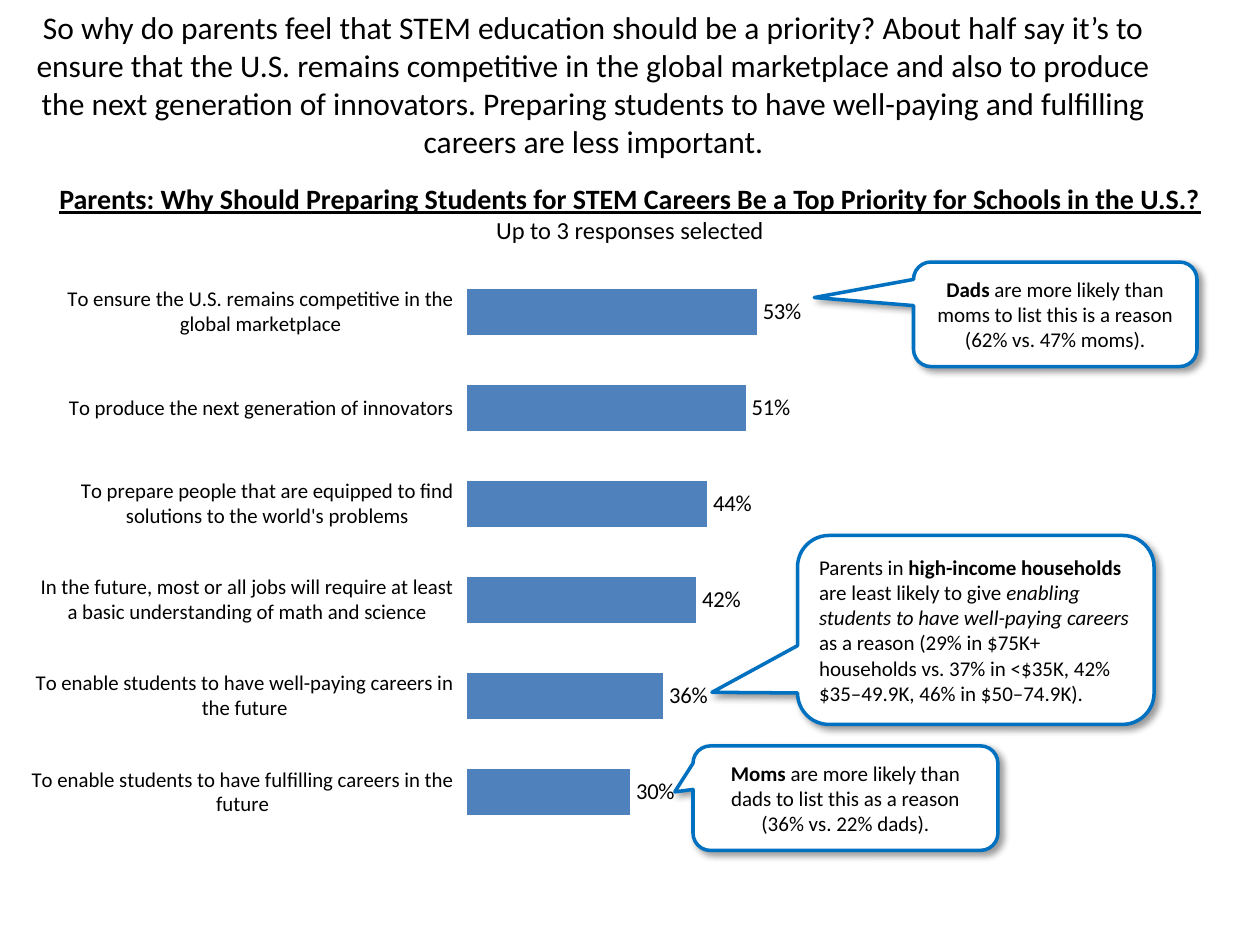
from lxml import etree
from pptx import Presentation
from pptx import util as u
from pptx.chart.data import CategoryChartData
from pptx.dml.color import RGBColor
from pptx.enum import chart as ch, shapes, text
from pptx.oxml import ns, parse_xml

Inches, Pt = u.Inches, u.Pt
FONT = "Calibri"
COLORS = {"text": "000000", "bar": "4F81BD", "paper": "FFFFFF", "callout": "0070C0"}

TITLE = ("So why do parents feel that STEM education should be a priority? About half say "
         "it’s to ensure that the U.S. remains competitive in the global marketplace and also "
         "to produce the next generation of innovators. Preparing students to have well-paying "
         "and fulfilling careers are less important.")
QUESTION = ("Parents: Why Should Preparing Students for STEM Careers Be a Top Priority "
            "for Schools in the U.S.?")
REASONS = [
    ("To enable students to have fulfilling careers in the future", 0.30),
    ("To enable students to have well-paying careers in the future", 0.36),
    ("In the future, most or all jobs will require at least a basic understanding of math "
     "and science", 0.42),
    ("To prepare people that are equipped to find solutions to the world's problems", 0.44),
    ("To produce the next generation of innovators", 0.51),
    ("To ensure the U.S. remains competitive in the global marketplace", 0.53),
]
LEFT, CENTER = text.PP_ALIGN.LEFT, text.PP_ALIGN.CENTER
# box, pointer tip relative to the box centre, alignment, runs of (text, style)
CALLOUTS = [
    ((6.33, 4.25, 2.83, 1.5), (-0.74, 0.33), LEFT, [
        ("Parents in ", ""), ("high-income households", "b"),
        (" are least likely to give ", ""),
        ("enabling students to have well-paying careers ", "i"),
        ("as a reason (29% in $75K+ households vs. 37% in <$35K, 42% $35–49.9K, "
         "46% in $50–74.9K).", "")]),
    ((7.25, 2.08, 2.25, 0.83), (-0.85, -0.16), CENTER, [
        ("Dads ", "b"),
        ("are more likely than moms to list this is a reason (62% vs. 47% moms).", "")]),
    ((5.5, 5.92, 2.42, 0.83), (-0.56, -0.06), CENTER, [
        ("Moms", "b"),
        (" are more likely than dads to list this as a reason (36% vs. 22% dads).", "")]),
]


def rgb(name):
    return RGBColor.from_string(COLORS[name])


def inches(box):
    return [Inches(v) for v in box]


def set_font(font, size):
    font.name, font.size = FONT, Pt(size)
    font.color.rgb = rgb("text")


def add_text(slide, box, lines, anchor):
    """Add centred paragraphs given as (text, size, is_heading)."""
    tf = slide.shapes.add_textbox(*inches(box)).text_frame
    tf.word_wrap, tf.vertical_anchor = True, anchor
    for i, (line, size, heading) in enumerate(lines):
        p = tf.add_paragraph() if i else tf.paragraphs[0]
        p.text, p.alignment = line, CENTER
        set_font(p.font, size)
        p.font.bold = p.font.underline = heading


def set_plot_area(chart, x, y, w, h):
    """Fix the inner plot area as fractions of the chart."""
    area = chart.plots[0]._element.getparent()
    for old in area.findall(ns.qn("c:layout")):
        area.remove(old)
    layout = etree.Element(ns.qn("c:layout"))
    manual = etree.SubElement(layout, ns.qn("c:manualLayout"))
    for tag, val in (("layoutTarget", "inner"), ("xMode", "edge"), ("yMode", "edge"),
                     ("x", x), ("y", y), ("w", w), ("h", h)):
        etree.SubElement(manual, ns.qn("c:" + tag)).set("val", str(val))
    area.insert(0, layout)


def add_reasons_chart(slide, box):
    data = CategoryChartData(number_format="0%")
    data.categories = [reason for reason, _ in REASONS]
    data.add_series("Series 1", [share for _, share in REASONS])
    chart = slide.shapes.add_chart(ch.XL_CHART_TYPE.BAR_CLUSTERED, *inches(box), data).chart
    chart.has_legend = chart.has_title = False
    set_font(chart.font, 18)
    set_plot_area(chart, 0.43, 0.07, 0.34, 0.93)

    axis = chart.category_axis
    axis.format.line.fill.background()
    axis.major_tick_mark = ch.XL_TICK_MARK.OUTSIDE
    set_font(axis.tick_labels.font, 12)
    axis = chart.value_axis
    axis.visible = axis.has_major_gridlines = False
    axis.minimum_scale, axis.maximum_scale = 0, 0.61

    plot = chart.plots[0]
    plot.gap_width, plot.vary_by_categories = 101, False
    bars = plot.series[0].format
    bars.fill.solid()
    bars.fill.fore_color.rgb = rgb("bar")
    bars.line.color.rgb, bars.line.width = rgb("paper"), Pt(1)
    plot.has_data_labels = True
    labels = plot.data_labels
    labels.show_value = True
    labels.number_format, labels.number_format_is_linked = "0%", False
    labels.position = ch.XL_LABEL_POSITION.OUTSIDE_END
    set_font(labels.font, 13)


def add_shadow(sp):
    sp.shadow.inherit = False
    effects = sp._element.spPr.find(ns.qn("a:effectLst"))
    effects.append(parse_xml(
        f'<a:outerShdw {ns.nsdecls("a")} blurRad="{Pt(4)}" dist="{Pt(3)}" dir="2700000" '
        f'algn="tl" rotWithShape="0"><a:srgbClr val="{COLORS["text"]}">'
        '<a:alpha val="40000"/></a:srgbClr></a:outerShdw>'))


def add_callout(slide, box, tip, align, runs):
    sp = slide.shapes.add_shape(shapes.MSO_SHAPE.ROUNDED_RECTANGULAR_CALLOUT, *inches(box))
    sp.adjustments[0], sp.adjustments[1] = tip
    sp.fill.solid()
    sp.fill.fore_color.rgb = rgb("paper")
    sp.line.color.rgb, sp.line.width = rgb("callout"), Pt(2)
    add_shadow(sp)
    tf = sp.text_frame
    tf.word_wrap, tf.vertical_anchor = True, text.MSO_ANCHOR.MIDDLE
    p = tf.paragraphs[0]
    p.alignment = align
    set_font(p.font, 12)
    for words, style in runs:
        r = p.add_run()
        r.text = words
        set_font(r.font, 12)
        r.font.bold, r.font.italic = style == "b", style == "i"


def main():
    prs = Presentation()
    prs.slide_width, prs.slide_height = Inches(10), Inches(7.5)
    slide = prs.slides.add_slide(prs.slide_layouts[6])
    add_reasons_chart(slide, (0.25, 1.75, 7.92, 4.92))
    add_text(slide, (0, 0, 9.42, 1.33), [(TITLE, 18, False)], text.MSO_ANCHOR.MIDDLE)
    add_text(slide, (0, 1.39, 10, 0.61),
             [(QUESTION, 16, True), ("Up to 3 responses selected", 14, False)],
             text.MSO_ANCHOR.TOP)
    for callout in CALLOUTS:
        add_callout(slide, *callout)
    prs.save("out.pptx")


if __name__ == "__main__":
    main()
